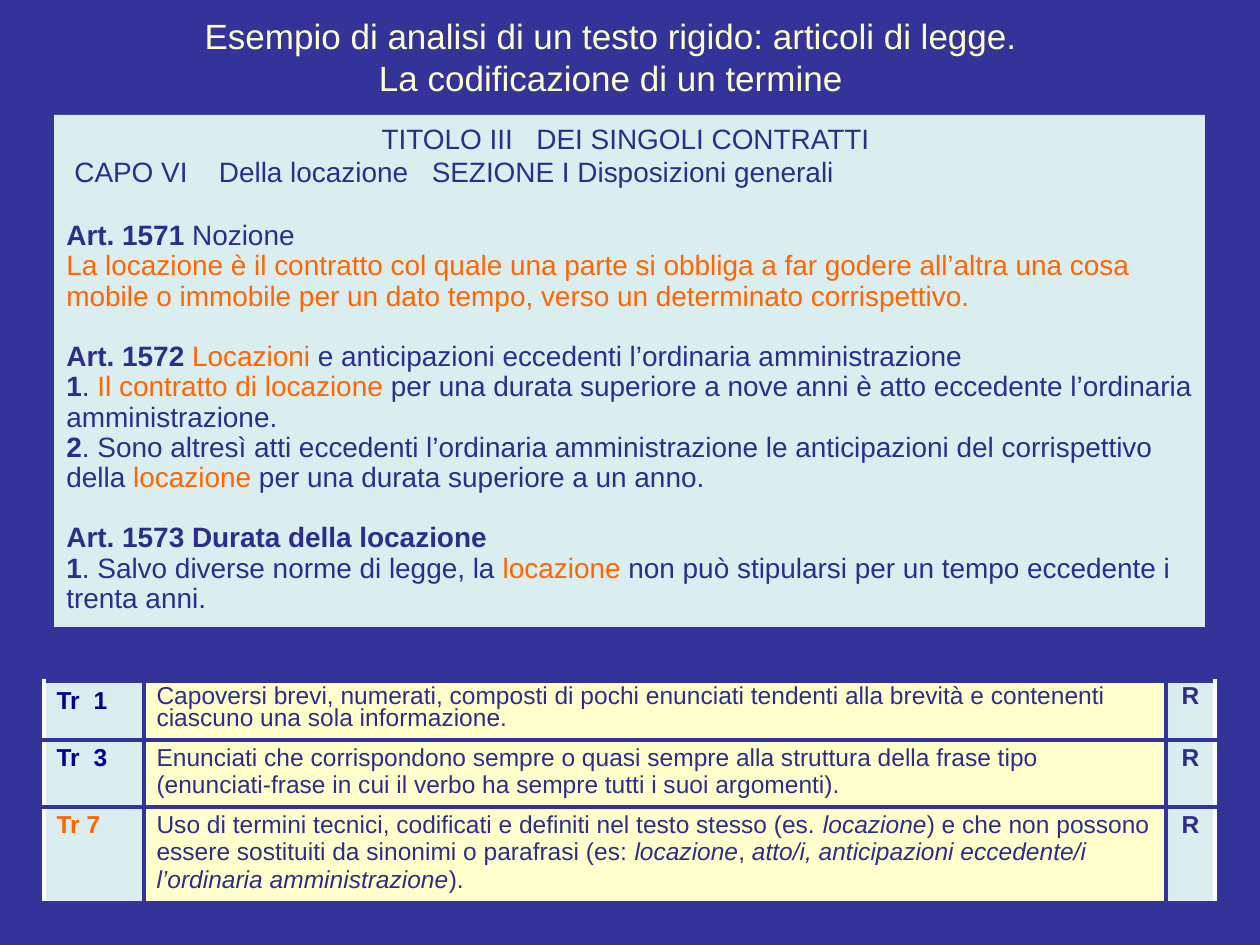
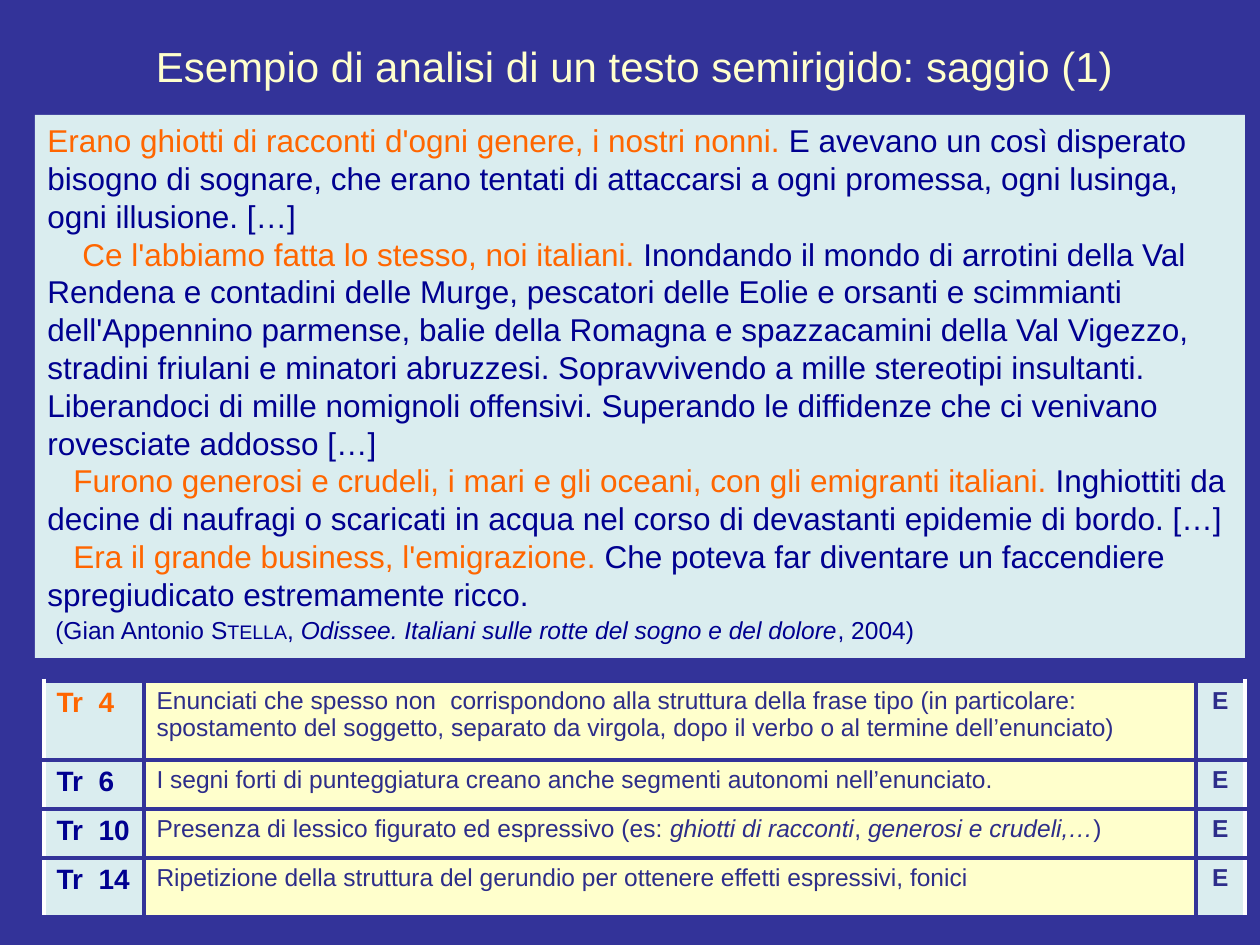
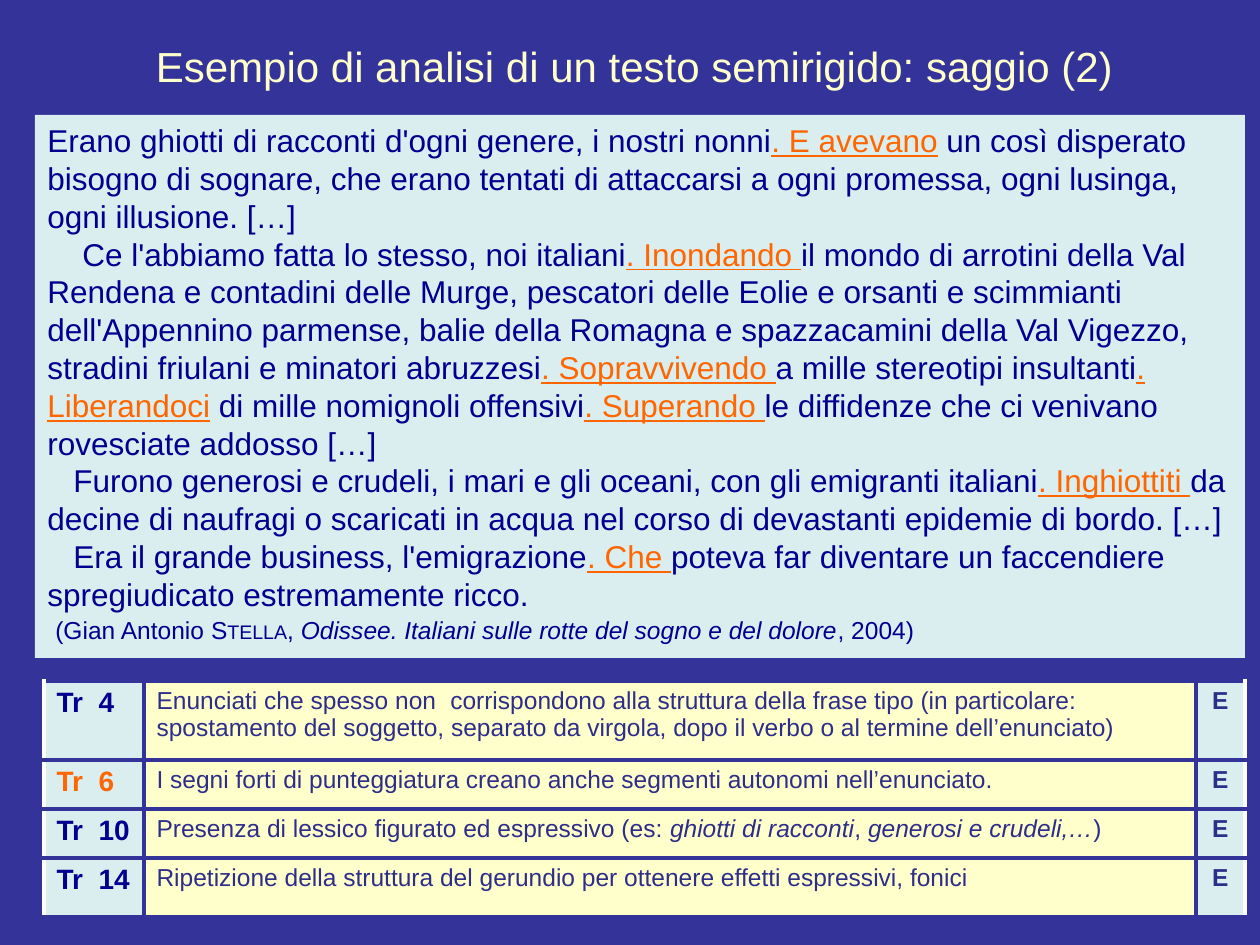
from lxml.etree import SubElement
from pptx import Presentation
from pptx.dml.color import RGBColor
from pptx.enum.shapes import MSO_SHAPE
from pptx.enum.text import MSO_ANCHOR, PP_ALIGN
from pptx.oxml.ns import qn
from pptx.util import Emu, Pt

EMU_PER_PX = 914400 / 126
FONT = "Arial"
SPACE_WIDTH = 0.28
BORDER_PT = 3
COLORS = {
    "navy": "333399",
    "cream": "FFFFCC",
    "ice": "DAEDEF",
    "ink": "2D2D8A",
    "deep": "000090",
    "accent": "FF6600",
    "white": "FFFFFF",
}
BOLD = {"bold": True}
ITALIC = {"italic": True}
ACCENT = {"color": "accent"}


def px(length):
    return Emu(round(length * EMU_PER_PX))


def rgb(name):
    return RGBColor.from_string(COLORS[name])


def add_run(paragraph, text, size=14, color="ink", bold=False, italic=False,
            underline=False, small_caps=False, spaces=1):
    run = paragraph.add_run()
    run.text = text
    font = run.font
    font.name, font.size = FONT, Pt(size)
    font.bold, font.italic, font.underline = bold, italic, underline
    font.color.rgb = rgb(color)
    properties = font._element
    if small_caps:
        properties.set("cap", "small")
    if spaces > 1:
        properties.set("spc", str(round(100 * size * SPACE_WIDTH * (spaces - 1))))


def gap(spaces):
    return " ", {"spaces": spaces}


def plain(text):
    return [(text, {})]


def marked(text, phrases, **style):
    runs = []
    for phrase in phrases:
        if phrase in text:
            before, found, text = text.partition(phrase)
            runs += [(before, {}), (found, style)]
    return [run for run in runs + plain(text) if run[0]]


class Deck:
    def __init__(self):
        self.presentation = Presentation()
        self.presentation.slide_width = px(1260)
        self.presentation.slide_height = px(945)
        self.slide = None

    def new_slide(self):
        self.slide = self.presentation.slides.add_slide(self.presentation.slide_layouts[6])
        background = self.slide.background.fill
        background.solid()
        background.fore_color.rgb = rgb("navy")

    def paragraph(self, frame, runs, first=False, align=PP_ALIGN.LEFT,
                  spacing=1.0, before=0, indent=0, **style):
        paragraph = frame.paragraphs[0] if first else frame.add_paragraph()
        paragraph.alignment = align
        paragraph.line_spacing = spacing
        paragraph.space_before = Pt(before)
        if indent:
            properties = paragraph._p.get_or_add_pPr()
            properties.set("marL", "0")
            properties.set("indent", str(px(indent)))
        for text, extra in runs:
            add_run(paragraph, text, **{**style, **extra})

    def title(self, box, lines, size):
        frame = self.slide.shapes.add_textbox(*map(px, box)).text_frame
        frame.word_wrap = True
        frame.vertical_anchor = MSO_ANCHOR.MIDDLE
        for number, line in enumerate(lines):
            self.paragraph(frame, plain(line), first=number == 0, align=PP_ALIGN.CENTER,
                           size=size, color="cream")

    def passage(self, box, paragraphs, **style):
        panel = self.slide.shapes.add_shape(MSO_SHAPE.RECTANGLE, *map(px, box))
        panel.shadow.inherit = False
        panel.fill.solid()
        panel.fill.fore_color.rgb = rgb("ice")
        panel.line.fill.background()
        frame = panel.text_frame
        frame.word_wrap = True
        frame.vertical_anchor = MSO_ANCHOR.TOP
        for number, (runs, layout) in enumerate(paragraphs):
            self.paragraph(frame, runs, first=number == 0, **{**style, **layout})

    def cell(self, cell, runs, fill, borders, margin, **style):
        cell.fill.solid()
        cell.fill.fore_color.rgb = rgb(fill)
        cell.margin_top = cell.margin_bottom = px(margin)
        self.paragraph(cell.text_frame, runs, first=True, **style)
        properties = cell._tc.get_or_add_tcPr()
        for position, (side, color) in enumerate(zip("LRTB", borders)):
            line = SubElement(properties, qn(f"a:ln{side}"), w=str(Pt(BORDER_PT)))
            solid = SubElement(line, qn("a:solidFill"))
            SubElement(solid, qn("a:srgbClr"), val=COLORS[color])
            properties.insert(position, line)

    def traits(self, rows, heights, text_width, mark, active, label_size,
               margin=6, tight_rows=()):
        widths = (100, text_width, 49)
        frame = self.slide.shapes.add_table(
            len(rows), 3, px(44), px(681), px(sum(widths)), px(sum(heights)))
        table = frame.table
        for column, width in zip(table.columns, widths):
            column.width = px(width)
        for number, ((label, runs), height) in enumerate(zip(rows, heights)):
            table.rows[number].height = px(height)
            tight = number in tight_rows
            spacing = 0.8 if tight else 1.0
            inset = 6 if tight else margin
            label_cell, text_cell, mark_cell = table.rows[number].cells
            label_cell.margin_right = 0
            self.cell(label_cell, label, "ice", ("white", "navy", "navy", "navy"), inset,
                      size=label_size, bold=True,
                      color="accent" if number == active else "deep")
            self.cell(text_cell, runs, "cream", ("navy",) * 4, inset, spacing=spacing)
            self.cell(mark_cell, plain(mark), "ice", ("navy", "white", "navy", "navy"),
                      inset, align=PP_ALIGN.CENTER, spacing=spacing, bold=True)


def trait_label(number):
    return [("Tr", {}), gap(2), (str(number), {})]


TIGHT = {"spacing": 0.9}
ARTICLE = {"spacing": 0.9, "before": 17.3}
LAW = [
    ([("TITOLO III", {}), gap(3), ("DEI SINGOLI CONTRATTI ", {})],
     {"align": PP_ALIGN.CENTER}),
    ([("CAPO VI", {}), gap(4), ("Della locazione", {}), gap(3),
      ("SEZIONE I Disposizioni generali", {})], {"indent": 8}),
    ([("Art. 1571 ", BOLD), ("Nozione", {})], {"spacing": 0.9, "before": 19}),
    ([("La locazione è il contratto col quale una parte si obbliga a far godere "
       "all’altra una cosa mobile o immobile per un dato tempo, verso un determinato "
       "corrispettivo.", ACCENT)], TIGHT),
    ([("Art. 1572 ", BOLD), ("Locazioni", ACCENT),
      (" e anticipazioni eccedenti l’ordinaria amministrazione", {})], ARTICLE),
    ([("1", BOLD), (". ", {}), ("Il contratto di locazione ", ACCENT),
      ("per una durata superiore a nove anni è atto eccedente l’ordinaria "
       "amministrazione.", {})], TIGHT),
    ([("2", BOLD),
      (". Sono altresì atti eccedenti l’ordinaria amministrazione le anticipazioni del "
       "corrispettivo della", {}), (" locazione ", ACCENT),
      ("per una durata superiore a un anno.", {})], TIGHT),
    ([("Art. 1573 Durata della locazione", BOLD)], ARTICLE),
    ([("1", BOLD), (". Salvo diverse norme di legge, la ", {}), ("locazione ", ACCENT),
      ("non può stipularsi per un tempo eccedente i trenta anni.", {})], TIGHT),
]
LAW_TRAITS = [
    (trait_label(1), plain(
        "Capoversi brevi, numerati, composti di pochi enunciati tendenti alla brevità e "
        "contenenti ciascuno una sola informazione.")),
    (trait_label(3), plain(
        "Enunciati che corrispondono sempre o quasi sempre alla struttura della frase tipo "
        "(enunciati-frase in cui il verbo ha sempre tutti i suoi argomenti).")),
    (plain("Tr 7"), marked(
        "Uso di termini tecnici, codificati e definiti nel testo stesso (es. locazione) e "
        "che non possono essere sostituiti da sinonimi o parafrasi (es: locazione, atto/i, "
        "anticipazioni eccedente/i l’ordinaria amministrazione).",
        ["locazione", "locazione",
         "atto/i, anticipazioni eccedente/i l’ordinaria amministrazione"], **ITALIC)),
]
ESSAY = [
    ("Erano ghiotti di racconti d'ogni genere, i nostri nonni. E avevano un così disperato "
     "bisogno di sognare, che erano tentati di attaccarsi a ogni promessa, ogni lusinga, "
     "ogni illusione. […]", 0),
    ("Ce l'abbiamo fatta lo stesso, noi italiani. Inondando il mondo di arrotini della Val "
     "Rendena e contadini delle Murge, pescatori delle Eolie e orsanti e scimmianti "
     "dell'Appennino parmense, balie della Romagna e spazzacamini della Val Vigezzo, "
     "stradini friulani e minatori abruzzesi. Sopravvivendo a mille stereotipi insultanti. "
     "Liberandoci di mille nomignoli offensivi. Superando le diffidenze che ci venivano "
     "rovesciate addosso […]", 35),
    ("Furono generosi e crudeli, i mari e gli oceani, con gli emigranti italiani. "
     "Inghiottiti da decine di naufragi o scaricati in acqua nel corso di devastanti "
     "epidemie di bordo. […]", 26),
    ("Era il grande business, l'emigrazione. Che poteva far diventare un faccendiere "
     "spregiudicato estremamente ricco.", 26),
]
CITATION = [
    ("(Gian Antonio ", {}), ("Stella", {"small_caps": True}), (", ", {}),
    ("Odissee. Italiani sulle rotte del sogno e del dolore", ITALIC), (", 2004)", {}),
]
ESSAY_TRAITS = [
    (trait_label(4), [
        ("Enunciati che spesso non", {}), gap(2),
        ("corrispondono alla struttura della frase tipo (in particolare: spostamento del "
         "soggetto, separato da virgola, dopo il verbo o al termine dell’enunciato)", {})]),
    (trait_label(6), plain(
        "I segni forti di punteggiatura creano anche segmenti autonomi nell’enunciato.")),
    (trait_label(10), marked(
        "Presenza di lessico figurato ed espressivo (es: ghiotti di racconti, generosi e "
        "crudeli,…)", ["ghiotti di racconti", "generosi e crudeli,…"], **ITALIC)),
    (trait_label(14), plain(
        "Ripetizione della struttura del gerundio per ottenere effetti espressivi, fonici")),
]
DISLOCATIONS = [
    "Erano ghiotti di racconti d'ogni genere, i nostri nonni.",
    "Ce l'abbiamo fatta lo stesso, noi italiani. ",
    "Furono generosi e crudeli, i mari e gli oceani, con gli emigranti italiani. ",
    "Era il grande business, l'emigrazione. ",
]
STRONG_STOPS = [
    ". E avevano", ". Inondando ", ". Sopravvivendo ", ". Liberandoci", ". Superando ",
    ". Inghiottiti ", ". Che ",
]


def law_slide(deck):
    deck.new_slide()
    deck.title((44, 16, 1134, 80),
               ["Esempio di analisi di un testo rigido: articoli di legge.",
                "La codificazione di un termine"], 20)
    deck.traits(LAW_TRAITS, (56, 67, 93), 1022, "R", active=2, label_size=14,
                margin=4, tight_rows=(0,))
    deck.passage((54, 115, 1151, 512), LAW, size=16)


def essay_slide(deck, part, phrases, active, **emphasis):
    deck.new_slide()
    deck.title((34, 16, 1201, 100),
               [f"Esempio di analisi di un testo semirigido: saggio ({part})"], 24)
    deck.traits(ESSAY_TRAITS, (79, 49, 49, 59), 1052, "E", active=active, label_size=16)
    paragraphs = [(marked(text, phrases, **ACCENT, **emphasis), {"indent": indent})
                  for text, indent in ESSAY]
    paragraphs.append((CITATION, {"indent": 8, "size": 14, "before": 1.5}))
    deck.passage((35, 115, 1210, 543), paragraphs, size=18, color="deep")


def main():
    deck = Deck()
    law_slide(deck)
    essay_slide(deck, 1, DISLOCATIONS, active=0)
    essay_slide(deck, 2, STRONG_STOPS, active=1, underline=True)
    deck.presentation.save("out.pptx")


if __name__ == "__main__":
    main()
